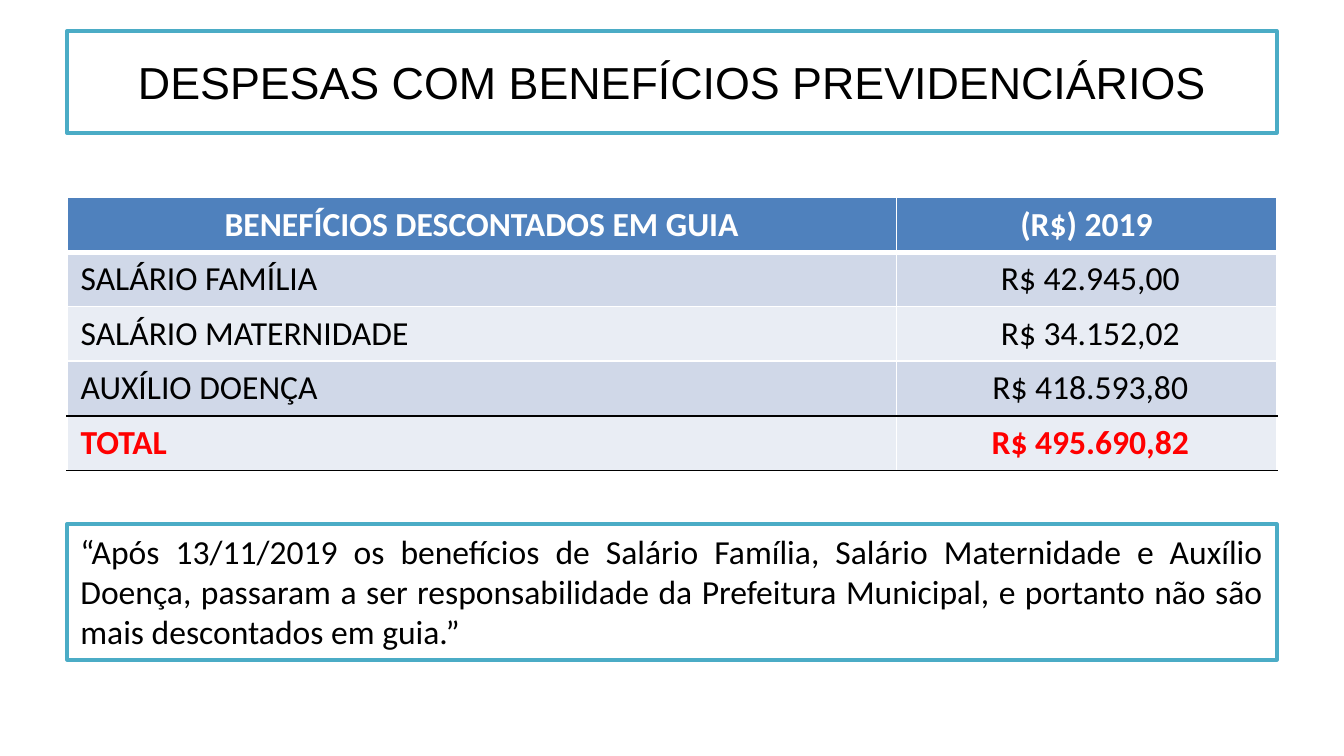
"""Build the slide on social security benefit expenses."""
from lxml import etree
from pptx import Presentation
from pptx.dml.color import RGBColor
from pptx.enum.shapes import MSO_SHAPE
from pptx.enum.text import MSO_ANCHOR, PP_ALIGN
from pptx.oxml.ns import qn
from pptx.util import Inches, Pt


def style_text(paragraph, text, font, size, color, align, bold=False):
    paragraph.text = text
    paragraph.alignment = align
    paragraph.font.name = font
    paragraph.font.size = Pt(size)
    paragraph.font.bold = bold
    paragraph.font.color.rgb = RGBColor.from_string(color)


def set_borders(cell, borders):
    properties = cell._tc.get_or_add_tcPr()
    for index, (side, color, width) in enumerate(borders):
        line = etree.Element(qn(f"a:ln{side}"), w=str(Pt(width)))
        fill = etree.SubElement(line, qn("a:solidFill"))
        etree.SubElement(fill, qn("a:srgbClr"), val=color)
        properties.insert(index, line)


deck = Presentation()
deck.slide_width = Inches(10)
deck.slide_height = deck.slide_width * 9 // 16
page = deck.slides.add_slide(deck.slide_layouts[6])

note = (
    "“Após 13/11/2019 os benefícios de Salário Família, Salário Maternidade e "
    "Auxílio Doença, passaram a ser responsabilidade da Prefeitura Municipal, "
    "e portanto não são mais descontados em guia.” "
)
panels = [
    (0.23, 0.76, "DESPESAS COM BENEFÍCIOS PREVIDENCIÁRIOS", "Arial", 24,
     PP_ALIGN.CENTER, MSO_ANCHOR.MIDDLE),
    (3.9, 1.01, note, "Calibri", 18, PP_ALIGN.JUSTIFY, MSO_ANCHOR.TOP),
]
for top, height, text, font, size, align, anchor in panels:
    box = page.shapes.add_shape(
        MSO_SHAPE.RECTANGLE, Inches(0.5), Inches(top), Inches(9), Inches(height))
    box.shadow.inherit = False
    box.fill.solid()
    box.fill.fore_color.rgb = RGBColor.from_string("FFFFFF")
    box.line.color.rgb = RGBColor.from_string("4BACC6")
    box.line.width = Pt(2)
    box.text_frame.word_wrap = True
    box.text_frame.vertical_anchor = anchor
    style_text(box.text_frame.paragraphs[0], text, font, size, "000000", align)

rows = [
    ("BENEFÍCIOS DESCONTADOS EM GUIA", "(R$) 2019"),
    ("SALÁRIO FAMÍLIA", " R$ 42.945,00"),
    ("SALÁRIO MATERNIDADE", " R$ 34.152,02"),
    ("AUXÍLIO DOENÇA", " R$ 418.593,80"),
    ("TOTAL", " R$ 495.690,82"),
]
fills = ["4F81BD", "D0D8E8", "E9EDF4", "D0D8E8", "E9EDF4"]
text_colors = ["FFFFFF", "000000", "000000", "000000", "FF0000"]
rules = [("FFFFFF", 1), ("FFFFFF", 3), ("FFFFFF", 1), ("FFFFFF", 1),
         ("000000", 1), ("000000", 1)]

table = page.shapes.add_table(
    len(rows), 2, Inches(0.5), Inches(1.47), Inches(9), Inches(2.03)).table
table.columns[0].width = Inches(6.17)
table.columns[1].width = Inches(2.83)
for row, texts in enumerate(rows):
    for column, text in enumerate(texts):
        cell = table.cell(row, column)
        cell.fill.solid()
        cell.fill.fore_color.rgb = RGBColor.from_string(fills[row])
        set_borders(cell, [("L", "FFFFFF", 1), ("R", "FFFFFF", 1),
                           ("T", *rules[row]), ("B", *rules[row + 1])])
        centered = row == 0 or column == 1
        style_text(cell.text_frame.paragraphs[0], text, "Calibri", 18,
                   text_colors[row],
                   PP_ALIGN.CENTER if centered else PP_ALIGN.LEFT,
                   row in (0, len(rows) - 1))

deck.save("out.pptx")
